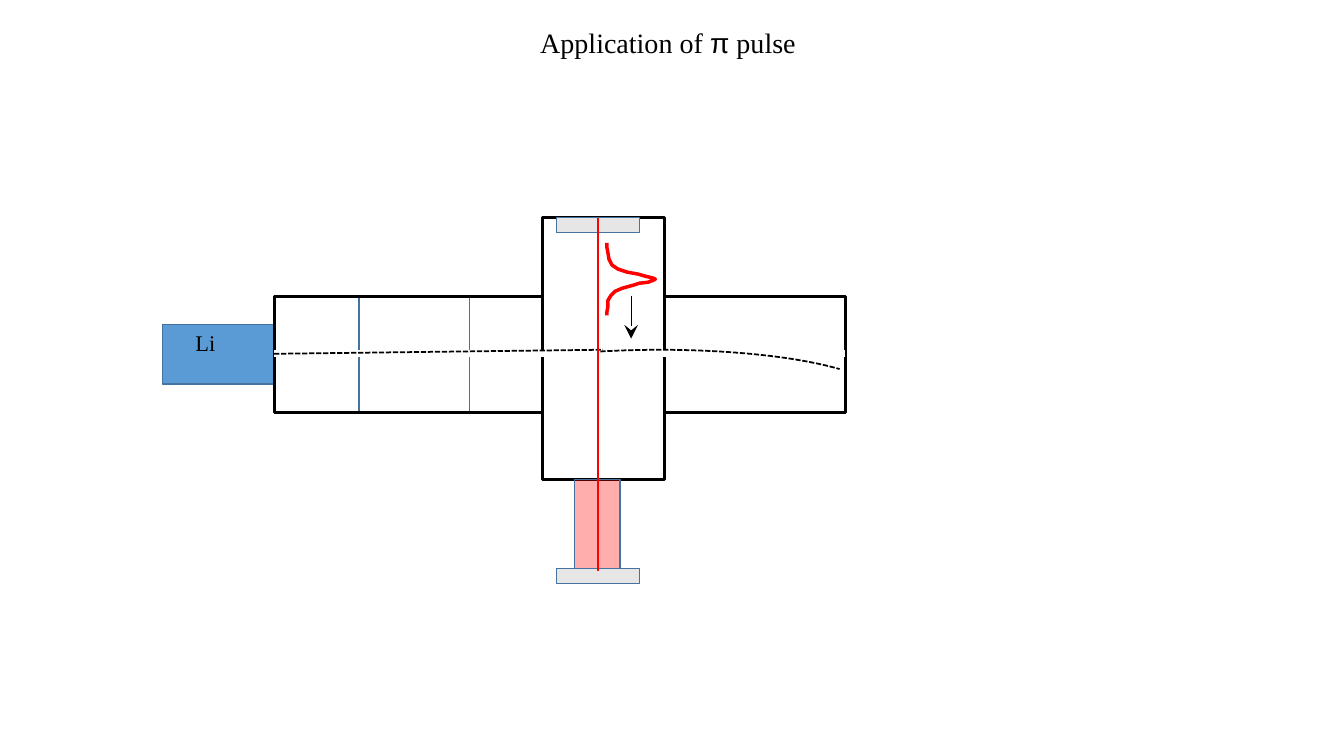
from lxml import etree
from pptx import Presentation
from pptx.dml.color import RGBColor
from pptx.enum.dml import MSO_LINE
from pptx.enum.shapes import MSO_CONNECTOR, MSO_SHAPE
from pptx.enum.text import MSO_AUTO_SIZE
from pptx.oxml.ns import qn
from pptx.util import Emu, Pt

PX = 9144
RECT, ARC = MSO_SHAPE.RECTANGLE, MSO_SHAPE.ARC
STRAIGHT = MSO_CONNECTOR.STRAIGHT
DASH = MSO_LINE.SQUARE_DOT
FIT = MSO_AUTO_SIZE.SHAPE_TO_FIT_TEXT
SERIF, SANS = "Times New Roman", "Arial"
COLORS = {
    "black": "000000", "white": "FFFFFF", "red": "FF0000",
    "edge": "43739E", "oven": "5B9BD5", "window": "E7E6E6",
}
PULSE = [
    (602, 241), (602, 246), (603, 251), (604, 257), (607, 263), (613, 267),
    (622, 270), (633, 272), (640, 274), (644, 275), (648, 276), (650, 277),
    (648, 278), (643, 280), (634, 281), (628, 283), (617, 286), (610, 289),
    (606, 293), (603, 298), (603, 304), (602, 309), (602, 313),
]


def px(*values):
    """Turn px lengths into EMU."""
    return [Emu(v * PX) for v in values]


def rgb(name):
    """Look up a named colour."""
    return RGBColor.from_string(COLORS[name])


def add_run(p, text, font=SERIF, size=20, color="black"):
    """Add one formatted run to a paragraph."""
    r = p.add_run()
    r.text = text
    r.font.name = font
    r.font.size = Pt(size)
    r.font.color.rgb = rgb(color)


class Sketch:
    """Draws styled elements on one slide."""

    def __init__(self, slide):
        """Keep the slide's shapes."""
        self.shapes = slide.shapes

    def stroke(self, line, color, width, dash=None):
        """Format a line."""
        line.color.rgb = rgb(color)
        line.width = Pt(width)
        if dash:
            line.dash_style = dash

    def shape(self, box, kind=RECT, fill=None, alpha=None, color="edge", width=1, dash=None):
        """Add a preset shape."""
        sp = self.shapes.add_shape(kind, *px(*box))
        sp.shadow.inherit = False
        if fill:
            sp.fill.solid()
            sp.fill.fore_color.rgb = rgb(fill)
        else:
            sp.fill.background()
        if alpha:
            clr = sp.fill._xPr.find(".//" + qn("a:srgbClr"))
            etree.SubElement(clr, qn("a:alpha"), val=str(alpha * 1000))
        self.stroke(sp.line, color, width, dash)
        return sp

    def line(self, ends, color="black", width=1.25, dash=None, arrow=False):
        """Add a straight line, with an arrowhead if asked."""
        cxn = self.shapes.add_connector(STRAIGHT, *px(*ends))
        self.stroke(cxn.line, color, width, dash)
        if arrow:
            etree.SubElement(cxn.line._get_or_add_ln(), qn("a:tailEnd"),
                             type="stealth", w="lg", len="lg")
        etree.SubElement(cxn._element.spPr, qn("a:effectLst"))

    def curve(self, points, color="red", width=2.5):
        """Add an open outline through the points."""
        fb = self.shapes.build_freeform(*points[0], scale=PX)
        fb.add_line_segments(points[1:], close=False)
        sp = fb.convert_to_shape()
        sp.shadow.inherit = False
        sp.fill.background()
        self.stroke(sp.line, color, width)

    def text(self, box, runs, size, wrap=True):
        """Add a one-paragraph text box from (text, font) runs."""
        tf = self.shapes.add_textbox(*px(*box)).text_frame
        tf.word_wrap = wrap
        tf.auto_size = FIT
        for text, font in runs:
            add_run(tf.paragraphs[0], text, font=font, size=size)


def main():
    """Build and save the slide."""
    prs = Presentation()
    prs.slide_width, prs.slide_height = px(1333, 750)
    s = Sketch(prs.slides.add_slide(prs.slide_layouts[6]))

    title = [("Application of ", SERIF), ("π", SANS), (" pulse", SERIF)]
    s.text((526, 20, 274, 44), title, 20, wrap=False)

    s.shape((356, 294, 110, 115))
    s.shape((161, 322, 111, 59), fill="oven")
    s.text((184, 322, 64, 37), [("Li", SERIF)], 16)
    s.shape((272, 294, 567, 115), color="black", width=2)
    s.shape((538, 216, 121, 260), fill="white", color="black", width=2)

    s.line((272, 351, 838, 351), color="white", width=5)
    s.line((272, 351, 598, 347), dash=DASH)
    arc = s.shape((435, 347, 439, 92), kind=ARC, color="black", width=1.25, dash=DASH)
    arc.adjustments[0], arc.adjustments[1] = 130.12, 210.86

    s.shape((570, 476, 45, 90), fill="red", alpha=32)
    for top in (564, 216):
        s.shape((552, top, 82, 15), fill="window")
    s.line((593, 216, 593, 566), color="red", width=1.75)
    s.curve(PULSE)
    s.line((626, 294, 626, 336), width=0.5, arrow=True)

    prs.save("out.pptx")


if __name__ == "__main__":
    main()
